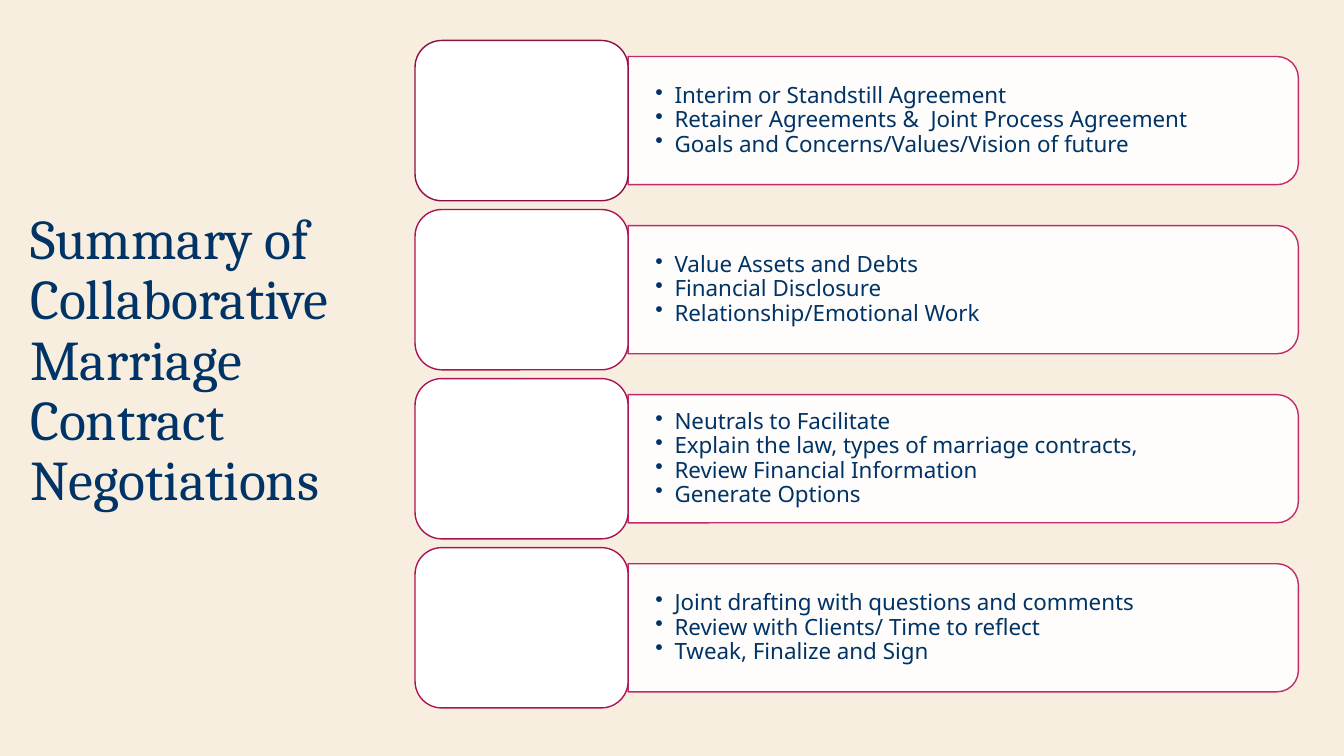
from lxml import etree
from pptx import Presentation
from pptx.dml.color import RGBColor
from pptx.enum.shapes import MSO_SHAPE as Preset
from pptx.enum.text import MSO_ANCHOR as Anchor
from pptx.oxml.ns import qn
from pptx.util import Cm, Pt

TITLE = "Summary of Collaborative Marriage Contract Negotiations"
STAGES = [
    ("8D1044", ["Interim or Standstill Agreement",
                "Retainer Agreements &  Joint Process Agreement",
                "Goals and Concerns/Values/Vision of future"]),
    ("AB1453", ["Value Assets and Debts",
                "Financial Disclosure",
                "Relationship/Emotional Work"]),
    ("AB1453", ["Neutrals to Facilitate",
                "Explain the law, types of marriage contracts,",
                "Review Financial Information",
                "Generate Options"]),
    ("AB1453", ["Joint drafting with questions and comments",
                "Review with Clients/ Time to reflect",
                "Tweak, Finalize and Sign"]),
]
NAVY, WHITE, PINK, CREAM = "003366", "FFFFFF", "BC165B", "F8EEE0"

# Lengths in centimetres
BOX_LEFT, BOX_TOP, BOX_WIDTH, BOX_HEIGHT = 10.46, 1.02, 5.37, 4.04
ROW_PITCH = 4.26
PANEL_LEFT = BOX_LEFT + BOX_WIDTH
PANEL_WIDTH, PANEL_HEIGHT = 16.89, 3.23
TEXT_WIDTH, TEXT_HEIGHT = 16.74, 2.92
INDENT = 0.48


def rgb(code):
    return RGBColor.from_string(code)


def set_opacity(shape, percent):
    """Apply one opacity to both the fill and the outline."""
    for color in shape._element.spPr.iter(qn("a:srgbClr")):
        etree.SubElement(color, qn("a:alpha"), val=str(percent * 1000))


def add_outlined(slide, preset, left, top, width, height, line_color):
    shape = slide.shapes.add_shape(preset, Cm(left), Cm(top), Cm(width), Cm(height))
    shape.shadow.inherit = False
    shape.fill.solid()
    shape.fill.fore_color.rgb = rgb(WHITE)
    shape.line.color.rgb = rgb(line_color)
    shape.line.width = Pt(1)
    return shape


def add_text(slide, left, top, width, height, lines, font_name, size):
    """Add a wrapped, vertically centred text box and return its frame."""
    box = slide.shapes.add_textbox(Cm(left), Cm(top), Cm(width), Cm(height))
    frame = box.text_frame
    frame.word_wrap = True
    frame.vertical_anchor = Anchor.MIDDLE
    frame.text = "\n".join(lines)
    for paragraph in frame.paragraphs:
        paragraph.line_spacing = 0.9
        paragraph.font.name = font_name
        paragraph.font.size = Pt(size)
        paragraph.font.color.rgb = rgb(NAVY)
    return frame


def add_bullet(paragraph):
    properties = paragraph._p.get_or_add_pPr()
    properties.set("marL", str(Cm(INDENT)))
    properties.set("indent", str(-Cm(INDENT)))
    bullet = etree.Element(qn("a:buChar"), char="•")
    properties.find(qn("a:defRPr")).addprevious(bullet)


def add_stage(slide, row, box_color, points):
    box_top = BOX_TOP + row * ROW_PITCH
    middle = box_top + BOX_HEIGHT / 2
    # The panel is an upright shape turned a quarter about its centre
    panel = add_outlined(slide, Preset.ROUND_2_SAME_RECTANGLE,
                         PANEL_LEFT + (PANEL_WIDTH - PANEL_HEIGHT) / 2,
                         middle - PANEL_WIDTH / 2,
                         PANEL_HEIGHT, PANEL_WIDTH, PINK)
    panel.rotation = 90
    set_opacity(panel, 90)
    frame = add_text(slide, PANEL_LEFT, middle - TEXT_HEIGHT / 2,
                     TEXT_WIDTH, TEXT_HEIGHT, points, "Noto Sans", 16)
    frame.margin_left = frame.margin_right = Cm(0.69)
    frame.margin_top = frame.margin_bottom = Cm(0.36)
    for paragraph in frame.paragraphs:
        add_bullet(paragraph)
    add_outlined(slide, Preset.ROUNDED_RECTANGLE, BOX_LEFT, box_top,
                 BOX_WIDTH, BOX_HEIGHT, box_color)


def main():
    presentation = Presentation()
    presentation.slide_width, presentation.slide_height = Cm(33.87), Cm(19.05)
    slide = presentation.slides.add_slide(presentation.slide_layouts[6])
    slide.background.fill.solid()
    slide.background.fill.fore_color.rgb = rgb(CREAM)

    add_text(slide, 0.51, 1.02, 9.02, 16.2, [TITLE], "Cambria", 40)
    for row, (box_color, points) in enumerate(STAGES):
        add_stage(slide, row, box_color, points)
    presentation.save("out.pptx")


if __name__ == "__main__":
    main()
